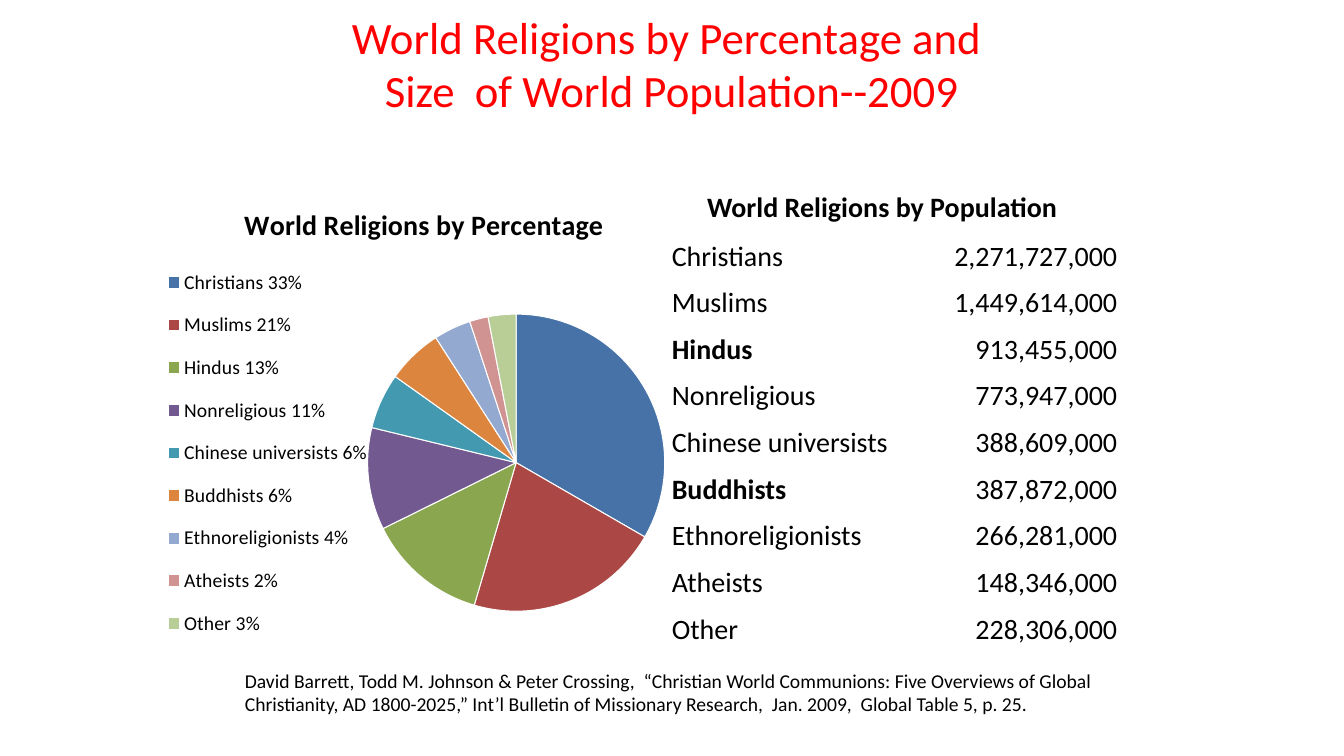
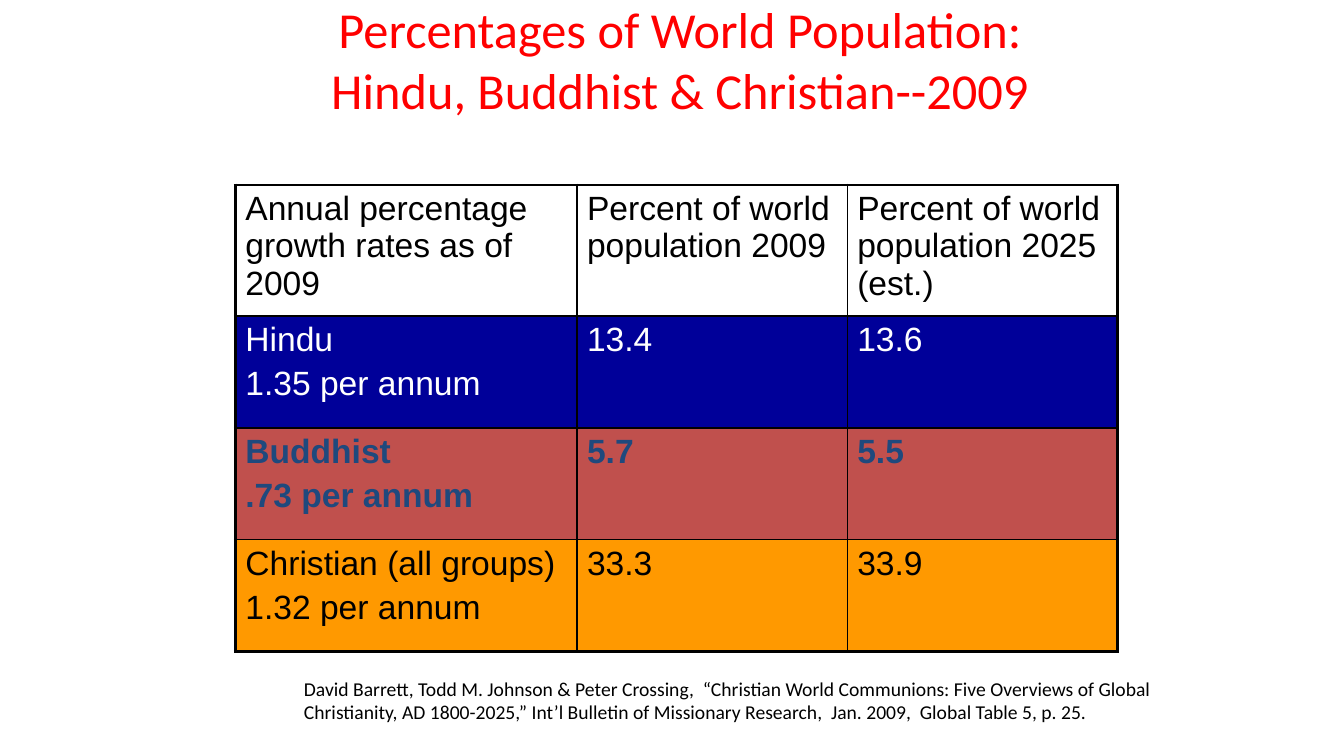
from lxml import etree
from pptx import Presentation
from pptx.chart.data import CategoryChartData
from pptx.dml.color import RGBColor
from pptx.enum.chart import XL_CHART_TYPE as CT, XL_LEGEND_POSITION as LP
from pptx.enum.text import MSO_ANCHOR as ANCHOR, PP_ALIGN as ALIGN
from pptx.oxml.ns import qn
from pptx.util import Cm, Pt

RED = RGBColor(0xFF, 0x00, 0x00)
BLACK = RGBColor(0x00, 0x00, 0x00)
WHITE = RGBColor(0xFF, 0xFF, 0xFF)
NAVY = RGBColor(0x00, 0x00, 0x99)
SLATE = RGBColor(0x1F, 0x49, 0x7D)
BRICK = RGBColor(0xC0, 0x50, 0x4D)
ORANGE = RGBColor(0xFF, 0x99, 0x00)
PIE_COLORS = [RGBColor.from_string(c) for c in (
    "4672A8", "AB4744", "8AA64F", "725990", "4299B0",
    "DC853E", "94A9D0", "D19392", "B9CD96")]

SANS, TABLE_FONT = "Calibri", "Arial"
THICK, THIN = Pt(2.25), Pt(1)
SOURCE = ("David Barrett, Todd M. Johnson & Peter Crossing,  “Christian World "
          "Communions: Five Overviews of Global Christianity, AD 1800-2025,” "
          "Int’l Bulletin of Missionary Research,  Jan. 2009,  "
          "Global Table 5, p. 25.")

RELIGIONS = [
    ("Christians", 33, "2,271,727,000"),
    ("Muslims", 21, "1,449,614,000"),
    ("Hindus", 13, "913,455,000"),
    ("Nonreligious", 11, "773,947,000"),
    ("Chinese universists", 6, "388,609,000"),
    ("Buddhists", 6, "387,872,000"),
    ("Ethnoreligionists", 4, "266,281,000"),
    ("Atheists", 2, "148,346,000"),
    ("Other", 3, "228,306,000"),
]
HIGHLIGHTED = ("Hindus", "Buddhists")

GROWTH_ROWS = [
    (("Annual percentage growth rates as of 2009",
      "Percent of world population 2009",
      "Percent of world population 2025 (est.)"), None, BLACK, False),
    (("Hindu\n1.35 per annum", "13.4", "13.6"), NAVY, WHITE, False),
    (("Buddhist\n.73 per annum", "5.7", "5.5"), BRICK, SLATE, True),
    (("Christian (all groups)\n1.32 per annum", "33.3", "33.9"),
     ORANGE, BLACK, False),
]


def style_font(font, size, color=BLACK, bold=False, name=SANS):
    """Set the face, size, colour and weight of a font."""
    font.name, font.size, font.bold = name, Pt(size), bold
    font.color.rgb = color


def add_run(p, text, size, **look):
    """Append one styled run to a paragraph."""
    r = p.add_run()
    r.text = text
    style_font(r.font, size, **look)


def add_text(slide, box, lines, size, align=ALIGN.LEFT, anchor=ANCHOR.TOP,
             **look):
    """Place a text box whose lines are parted by line breaks."""
    tf = slide.shapes.add_textbox(*map(Cm, box)).text_frame
    tf.word_wrap = True
    tf.vertical_anchor = anchor
    p = tf.paragraphs[0]
    p.alignment = align
    for i, line in enumerate(lines):
        if i:
            p.add_line_break()
        add_run(p, line, size, **look)


def add_title(slide, box, lines, size):
    """Place the red centred slide title."""
    add_text(slide, box, lines, size, ALIGN.CENTER, ANCHOR.MIDDLE, color=RED)


def add_source(slide, left, top):
    """Place the citation under the slide's content."""
    add_text(slide, (left, top, 22.23, 1.45), [SOURCE], 14)


def set_layout(parent, index, x, y, w, h, inner=False):
    """Give a chart part a fixed place, in fractions of the chart."""
    for old in parent.findall(qn("c:layout")):
        parent.remove(old)
    layout = etree.Element(qn("c:layout"))
    manual = etree.SubElement(layout, qn("c:manualLayout"))
    settings = [("layoutTarget", "inner")] if inner else []
    settings += [("xMode", "edge"), ("yMode", "edge"),
                 ("x", x), ("y", y), ("w", w), ("h", h)]
    for tag, value in settings:
        etree.SubElement(manual, qn("c:" + tag)).set("val", str(value))
    parent.insert(index, layout)


def add_pie(slide, box):
    """Place the pie of shares with its legend on the left."""
    title = "World Religions by Percentage"
    data = CategoryChartData()
    data.categories = [f"{name} {share}%" for name, share, _ in RELIGIONS]
    data.add_series(title, [share for _, share, _ in RELIGIONS])
    chart = slide.shapes.add_chart(CT.PIE, *map(Cm, box), data).chart
    style_font(chart.font, 10)
    chart.has_title = True
    add_run(chart.chart_title.text_frame.paragraphs[0], title, 20, bold=True)
    chart.has_legend = True
    legend = chart.legend
    legend.position = LP.LEFT
    legend.include_in_layout = False
    style_font(legend.font, 14)
    plot = chart.plots[0]
    plot.vary_by_categories = True
    for i, color in enumerate(PIE_COLORS):
        fmt = plot.series[0].points[i].format
        fmt.fill.solid()
        fmt.fill.fore_color.rgb = color
        fmt.line.color.rgb = WHITE
        fmt.line.width = Pt(0.75)
    plot_area = chart.element.find(".//" + qn("c:plotArea"))
    legend_el = chart.element.find(".//" + qn("c:legend"))
    set_layout(plot_area, 0, 0.39, 0.21, 0.58, 0.74, inner=True)
    set_layout(legend_el, 1, 0, 0.14, 0.39, 0.84)


def add_grid(slide, box, widths, heights):
    """Place an unbanded table with the given columns and rows."""
    tbl = slide.shapes.add_table(
        len(heights), len(widths), *map(Cm, box)).table
    tbl.first_row = tbl.horz_banding = False
    for col, width in zip(tbl.columns, widths):
        col.width = Cm(width)
    for row, height in zip(tbl.rows, heights):
        row.height = Cm(height)
    return tbl


def add_population(slide, box):
    """Place the heading and the borderless table of populations."""
    left, top, width, height = box
    add_text(slide, (left + 0.64, top - 1.07, 9.73, 1.12),
             ["World Religions by Population"], 20, bold=True)
    count = len(RELIGIONS)
    tbl = add_grid(slide, box, (6.45, width - 6.45), [height / count] * count)
    for i, (name, _, people) in enumerate(RELIGIONS):
        entries = ((name, ALIGN.LEFT, name in HIGHLIGHTED),
                   (people, ALIGN.RIGHT, False))
        for j, (text, align, bold) in enumerate(entries):
            cell = tbl.cell(i, j)
            cell.margin_left = cell.margin_right = 0
            cell.margin_top = cell.margin_bottom = 0
            cell.vertical_anchor = ANCHOR.BOTTOM
            cell.fill.background()
            p = cell.text_frame.paragraphs[0]
            p.alignment = align
            add_run(p, text, 20, bold=bold)


def set_borders(cell, **widths):
    """Draw black cell borders; keys are L, R, T and B."""
    tc_pr = cell._tc.get_or_add_tcPr()
    for side, width in widths.items():
        ln = etree.SubElement(tc_pr, qn("a:ln" + side), w=str(int(width)))
        fill = etree.SubElement(ln, qn("a:solidFill"))
        etree.SubElement(fill, qn("a:srgbClr"), val=str(BLACK))


def add_growth(slide, box):
    """Place the ruled table of growth rates and shares."""
    left, top, width, height = box
    first_col, first_row = 8.61, 3.3
    last_row, last_col = len(GROWTH_ROWS) - 1, 2
    widths = [first_col] + [(width - first_col) / last_col] * last_col
    heights = [first_row] + [(height - first_row) / last_row] * last_row
    tbl = add_grid(slide, box, widths, heights)
    for i, (texts, fill, color, bold) in enumerate(GROWTH_ROWS):
        for j, text in enumerate(texts):
            cell = tbl.cell(i, j)
            set_borders(cell,
                        L=THIN if j else THICK,
                        R=THICK if j == last_col else THIN,
                        T=THIN if i else THICK,
                        B=THICK if i == last_row else THIN)
            if fill is None:
                cell.fill.background()
            else:
                cell.fill.solid()
                cell.fill.fore_color.rgb = fill
            tf = cell.text_frame
            for k, line in enumerate(text.split("\n")):
                p = tf.add_paragraph() if k else tf.paragraphs[0]
                p.space_before = Pt(4.8 if k else 0)
                add_run(p, line, 24, color=color, bold=bold, name=TABLE_FONT)


def build_religions(slide):
    """Build the slide of religions by share and by population."""
    add_title(slide, (7.19, 0, 19.48, 3.18),
              ["World Religions by Percentage and ",
               "Size  of World Population--2009"], 32)
    add_source(slide, 5.92, 16.72)
    add_pie(slide, (4.23, 4.66, 12.91, 12.07))
    add_population(slide, (16.93, 5.72, 11.23, 10.58))


def build_growth(slide):
    """Build the slide that compares three religions."""
    add_title(slide, (7.19, 0, 19.9, 2.96),
              ["Percentages of World Population: "
               "Hindu, Buddhist & Christian--2009"], 36)
    add_growth(slide, (5.93, 4.66, 22.23, 11.76))
    add_source(slide, 7.41, 16.93)


def main():
    """Build and save the presentation."""
    prs = Presentation()
    prs.slide_width, prs.slide_height = Cm(33.87), Cm(19.05)
    for build in (build_religions, build_growth):
        build(prs.slides.add_slide(prs.slide_layouts[6]))
    prs.save("out.pptx")


if __name__ == "__main__":
    main()
